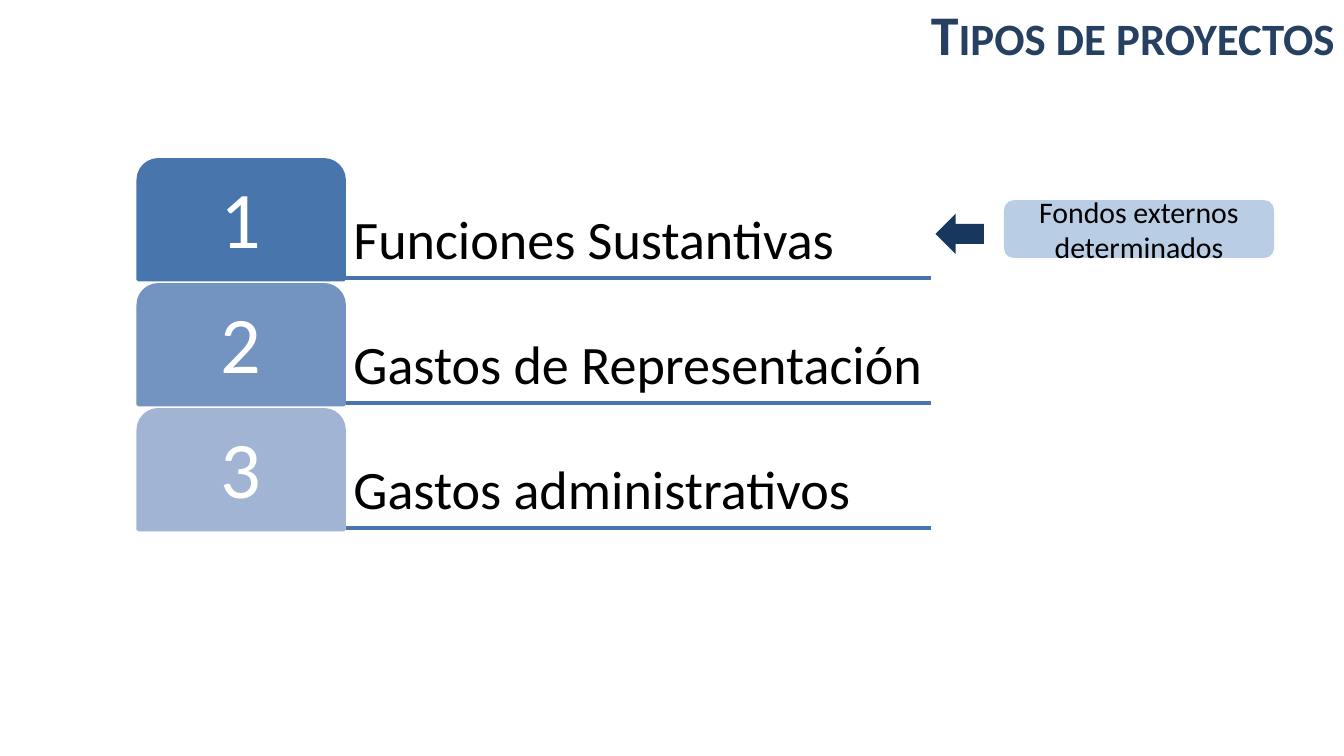
from dataclasses import dataclass

from lxml import etree
from pptx import Presentation
from pptx import util as u
from pptx.dml.color import RGBColor
from pptx.enum import shapes as sh, text as tx
from pptx.oxml.ns import qn


@dataclass(frozen=True)
class Theme:
    font: str = "Calibri"
    title: str = "254061"
    text: str = "000000"
    number: str = "FFFFFF"
    rule: str = "4875AC"
    note: str = "B9CDE5"
    arrow: str = "17375E"
    title_size: float = 30
    label_size: float = 29
    number_size: float = 43
    note_size: float = 16
    rule_width: float = 2


@dataclass(frozen=True)
class ProjectType:
    label: str
    color: str


THEME = Theme()
PROJECT_TYPES = [
    ProjectType("Funciones Sustantivas", "4875AC"),
    ProjectType("Gastos de Representación", "7393C1"),
    ProjectType("Gastos administrativos", "A2B4D4"),
]
# Row grid, in inches
LEFT, TOP, PITCH, ROW_HEIGHT = 1.03, 1.19, 0.93, 0.89
TAB_WIDTH, LABEL_LEFT, RIGHT = 1.53, 2.57, 6.93


def box(left: float, top: float, width: float, height: float) -> list[u.Length]:
    return [u.Inches(value) for value in (left, top, width, height)]


def write(shape, words: str, size: float, color: str, align, anchor,
          inset_x: float, inset_y: float, spacing: float = 1.0) -> None:
    frame = shape.text_frame
    frame.text = words
    frame.word_wrap = True
    frame.auto_size = tx.MSO_AUTO_SIZE.NONE
    frame.vertical_anchor = anchor
    frame.margin_left = frame.margin_right = u.Inches(inset_x)
    frame.margin_top = frame.margin_bottom = u.Inches(inset_y)
    paragraph = frame.paragraphs[0]
    paragraph.alignment = align
    paragraph.line_spacing = spacing
    font = paragraph.runs[0].font
    font.name, font.size = THEME.font, u.Pt(size)
    font.color.rgb = RGBColor.from_string(color)


def add_block(slide, kind, place: list[u.Length], color: str):
    block = slide.shapes.add_shape(kind, *place)
    block.shadow.inherit = False
    block.fill.solid()
    block.fill.fore_color.rgb = RGBColor.from_string(color)
    block.line.fill.background()
    return block


def add_rule(slide, y: float) -> None:
    rule = slide.shapes.add_connector(
        sh.MSO_CONNECTOR.STRAIGHT,
        u.Inches(LEFT), u.Inches(y), u.Inches(RIGHT), u.Inches(y))
    rule.line.color.rgb = RGBColor.from_string(THEME.rule)
    rule.line.width = u.Pt(THEME.rule_width)
    etree.SubElement(rule._element.spPr, qn("a:effectLst"))


def add_row(slide, number: int, project: ProjectType) -> None:
    top = TOP + (number - 1) * PITCH

    label = slide.shapes.add_textbox(
        *box(LABEL_LEFT, top, RIGHT - LABEL_LEFT, ROW_HEIGHT))
    write(label, project.label, THEME.label_size, THEME.text,
          tx.PP_ALIGN.LEFT, tx.MSO_ANCHOR.BOTTOM, 0.06, 0.06, 0.9)

    tab = add_block(slide, sh.MSO_SHAPE.ROUND_2_SAME_RECTANGLE,
                    box(LEFT, top, TAB_WIDTH, ROW_HEIGHT), project.color)
    tab.line.color.rgb = RGBColor.from_string(project.color)
    tab.line.width = u.Pt(THEME.rule_width)
    write(tab, str(number), THEME.number_size, THEME.number,
          tx.PP_ALIGN.CENTER, tx.MSO_ANCHOR.MIDDLE, 0.09, 0.09, 0.9)


def add_title(slide, words: str) -> None:
    title = slide.shapes.title
    title.left, title.top, title.width, title.height = box(2.53, 0, 7.5, 0.62)
    write(title, words, THEME.title_size, THEME.title,
          tx.PP_ALIGN.RIGHT, tx.MSO_ANCHOR.TOP, 0.1, 0)
    font = title.text_frame.paragraphs[0].runs[0].font
    font.bold = True
    font._element.set("cap", "small")


def main() -> None:
    deck = Presentation()
    # Widescreen, 16:9
    deck.slide_width = u.Inches(10)
    deck.slide_height = deck.slide_width * 9 // 16
    slide = deck.slides.add_slide(deck.slide_layouts[5])

    add_title(slide, "Tipos de proyectos")

    # Rules under the rows, behind the numbered tabs
    for row in reversed(range(len(PROJECT_TYPES))):
        add_rule(slide, TOP + row * PITCH + ROW_HEIGHT - 0.01)

    # Numbered project types
    for number, project in enumerate(PROJECT_TYPES, start=1):
        add_row(slide, number, project)

    # Funding note pointing at the first type
    funding = add_block(slide, sh.MSO_SHAPE.ROUNDED_RECTANGLE,
                        box(7.47, 1.49, 2.01, 0.43), THEME.note)
    write(funding, "Fondos externos determinados", THEME.note_size, THEME.text,
          tx.PP_ALIGN.CENTER, tx.MSO_ANCHOR.MIDDLE, 0.1, 0.05)
    pointer = add_block(slide, sh.MSO_SHAPE.RIGHT_ARROW,
                        box(6.96, 1.59, 0.36, 0.3), THEME.arrow)
    pointer.rotation = 180

    deck.save("out.pptx")


if __name__ == "__main__":
    main()
